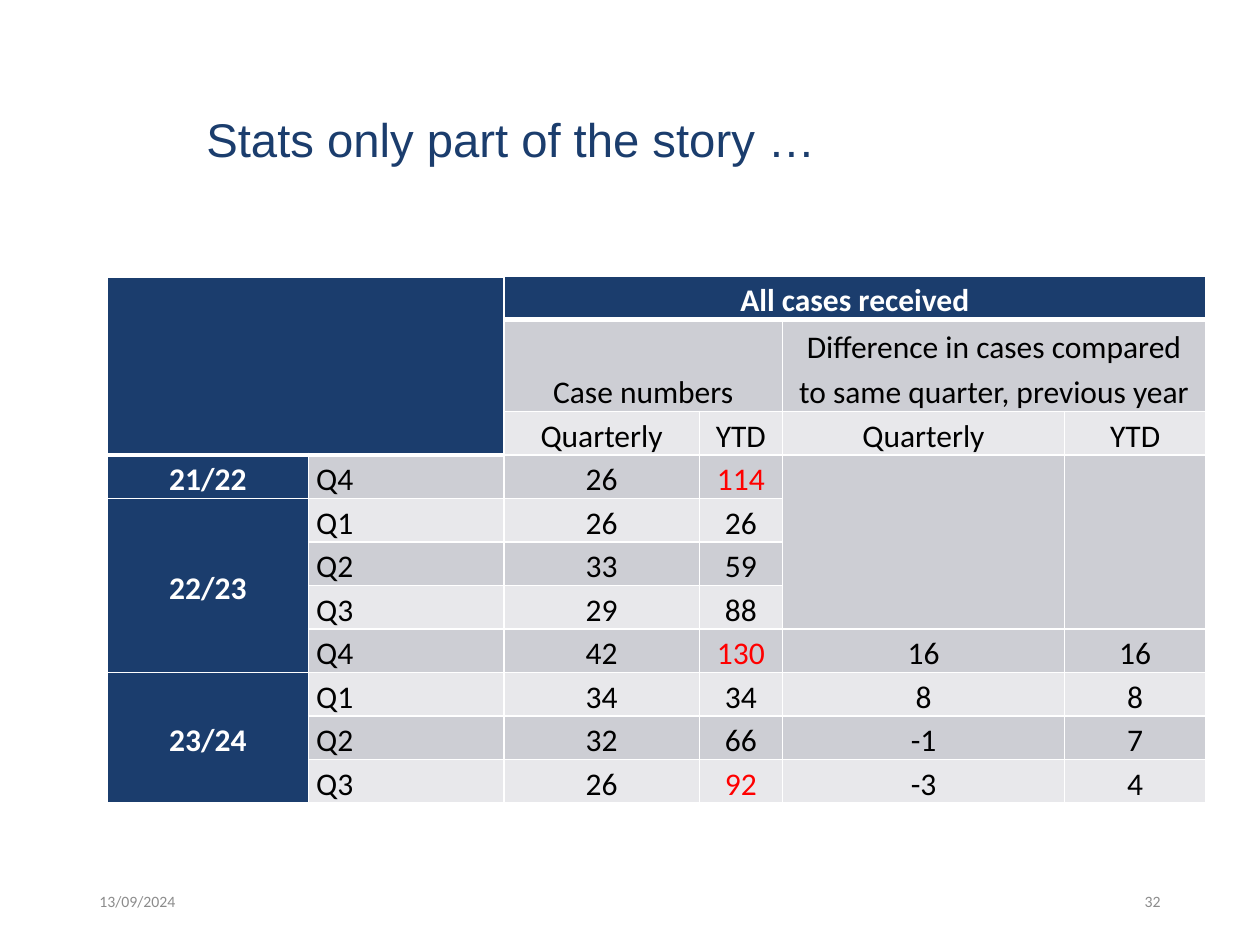
"""Build the slide with the table of quarterly case statistics."""
from lxml.etree import SubElement
from pptx import Presentation
from pptx.dml.color import RGBColor
from pptx.enum.text import MSO_ANCHOR, PP_ALIGN
from pptx.oxml.ns import qn
from pptx.util import Inches, Pt

NAVY = RGBColor(0x1B, 0x3D, 0x6D)
DARK_BAND = RGBColor(0xCD, 0xCE, 0xD4)
LIGHT_BAND = RGBColor(0xE8, 0xE8, 0xEB)
WHITE = RGBColor(0xFF, 0xFF, 0xFF)
BLACK = RGBColor(0x00, 0x00, 0x00)
RED = RGBColor(0xFF, 0x00, 0x00)
GREY = RGBColor(0x8C, 0x8C, 0x8C)

COLUMN_WIDTHS = [1.6, 1.55, 1.55, 0.66, 2.24, 1.12]
ROW_HEIGHTS = [0.32, 0.73] + [0.32] * 9
CASES = [
    ["", "", "All cases received", "", "", ""],
    ["", "", "Case numbers", "",
     "Difference in cases compared to same quarter, previous year", ""],
    ["", "", "Quarterly", "YTD", "Quarterly", "YTD"],
    ["21/22", "Q4", "26", "114", "", ""],
    ["22/23", "Q1", "26", "26", "", ""],
    ["", "Q2", "33", "59", "", ""],
    ["", "Q3", "29", "88", "", ""],
    ["", "Q4", "42", "130", "16", "16"],
    ["23/24", "Q1", "34", "34", "8", "8"],
    ["", "Q2", "32", "66", "-1", "7"],
    ["", "Q3", "26", "92", "-3", "4"],
]
MERGES = [
    ((0, 0), (2, 1)), ((0, 2), (0, 5)), ((1, 2), (1, 3)), ((1, 4), (1, 5)),
    ((3, 4), (6, 4)), ((3, 5), (6, 5)), ((4, 0), (7, 0)), ((8, 0), (10, 0)),
]
YEAR_TOTALS = {(3, 3), (7, 3), (10, 3)}


def is_heading(row, column):
    return row == 0 or (row < 3 and column < 2)


class SlideBuilder:
    """Hold the text style and the current slide."""

    font_name = "Calibri"
    table_size = 18

    def __init__(self, slide):
        self.slide = slide

    def style(self, paragraph, size, color, align, name=font_name, bold=False):
        paragraph.alignment = align
        font = paragraph.font
        font.name, font.size, font.bold = name, Pt(size), bold
        font.color.rgb = color

    def text(self, text, box, size, color, align=PP_ALIGN.LEFT, name=font_name):
        frame = self.slide.shapes.add_textbox(*map(Inches, box)).text_frame
        frame.word_wrap = True
        frame.vertical_anchor = MSO_ANCHOR.MIDDLE
        paragraph = frame.paragraphs[0]
        paragraph.text = text
        self.style(paragraph, size, color, align, name)
        return paragraph

    def borders(self, cell, row, column):
        heavy_sides = {"T": is_heading(row - 1, column), "B": is_heading(row, column)}
        properties = cell._tc.get_or_add_tcPr()
        for side in "LRTB":
            width = Pt(3 if heavy_sides.get(side) else 1)
            line = SubElement(properties, qn(f"a:ln{side}"), w=str(width))
            fill = SubElement(line, qn("a:solidFill"))
            SubElement(fill, qn("a:srgbClr"), val=str(WHITE))

    def cell(self, cell, text, row, column):
        navy = is_heading(row, column) or column == 0
        self.borders(cell, row, column)
        cell.fill.solid()
        cell.fill.fore_color.rgb = NAVY if navy else DARK_BAND if row % 2 else LIGHT_BAND
        cell.margin_left = cell.margin_right = Inches(0.06)
        cell.margin_top = cell.margin_bottom = 0
        at_bottom = row < 2 or (row > 6 and column > 3)
        cell.vertical_anchor = MSO_ANCHOR.BOTTOM if at_bottom else MSO_ANCHOR.MIDDLE
        paragraph = cell.text_frame.paragraphs[0]
        paragraph.text = text
        paragraph.line_spacing = 1.15
        paragraph.space_after = Pt(8)
        color = WHITE if navy else RED if (row, column) in YEAR_TOTALS else BLACK
        align = PP_ALIGN.LEFT if column == 1 else PP_ALIGN.CENTER
        self.style(paragraph, self.table_size, color, align, bold=navy)

    def table(self, rows, left, top):
        size = sum(COLUMN_WIDTHS), sum(ROW_HEIGHTS)
        table = self.slide.shapes.add_table(
            len(rows), len(COLUMN_WIDTHS), *map(Inches, (left, top, *size))
        ).table
        for column, width in zip(table.columns, COLUMN_WIDTHS):
            column.width = Inches(width)
        for row, height in zip(table.rows, ROW_HEIGHTS):
            row.height = Inches(height)
        for row, texts in enumerate(rows):
            for column, text in enumerate(texts):
                self.cell(table.cell(row, column), text, row, column)
        for first, last in MERGES:
            table.cell(*first).merge(table.cell(*last))


def main():
    presentation = Presentation()
    presentation.slide_width, presentation.slide_height = Inches(10), Inches(7.5)
    slide = presentation.slides.add_slide(presentation.slide_layouts[6])
    builder = SlideBuilder(slide)
    title = builder.text("Stats only part of the story …", (1.54, 0.4, 7.33, 1.45),
                         27, NAVY, name="Arial")
    title.line_spacing = 0.9
    builder.text("13/09/2024", (0.69, 6.95, 2.25, 0.4), 9, GREY)
    builder.text("32", (7.06, 6.95, 2.25, 0.4), 9, GREY, PP_ALIGN.RIGHT)
    builder.table(CASES, 0.85, 2.19)
    presentation.save("out.pptx")


if __name__ == "__main__":
    main()
